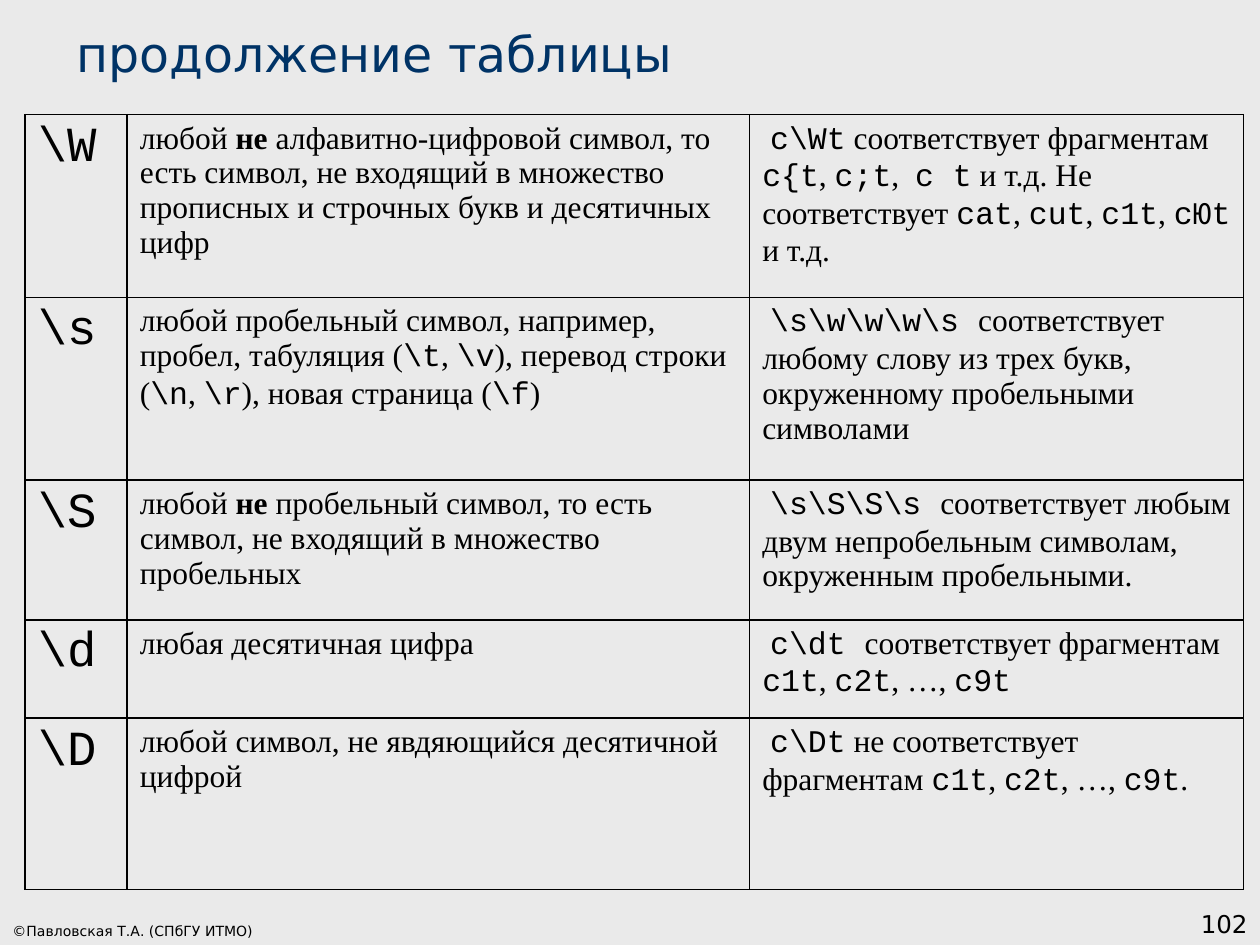
from lxml import etree
from pptx import Presentation
from pptx.dml.color import RGBColor
from pptx.enum.text import MSO_ANCHOR, PP_ALIGN
from pptx.oxml.ns import qn
from pptx.util import Inches, Pt

BOTTOM = MSO_ANCHOR.BOTTOM
LEFT, RIGHT = PP_ALIGN.LEFT, PP_ALIGN.RIGHT

BLACK = RGBColor(0x00, 0x00, 0x00)
NAVY = RGBColor(0x00, 0x33, 0x66)
PALE_GRAY = RGBColor(0xEA, 0xEA, 0xEA)

SANS = "DejaVu Sans"
SERIF = "Times New Roman"
MONO = "Courier New"

COLUMN_WIDTHS = [0.81, 4.94, 3.92]
ROW_HEIGHTS = [1.45, 1.45, 1.11, 0.78, 1.36]

# In the cells `...` marks code and *...* marks bold text.
ROWS = [
    (r"`\W`",
     "любой *не* алфавитно-цифровой символ, то есть символ, не входящий "
     "в множество прописных и строчных букв и десятичных цифр",
     r" `c\Wt` соответствует фрагментам `c{t`, `c;t`,  `c t` и т.д. "
     "Не соответствует `cat`, `cut`, `c1t`, `cЮt` и т.д."),
    (r"`\s`",
     r"любой пробельный символ, например, пробел, табуляция (`\t`, `\v`), "
     r"перевод строки (`\n`, `\r`), новая страница (`\f`)",
     r" `\s\w\w\w\s `соответствует любому слову из трех букв, "
     "окруженному пробельными символами"),
    (r"`\S`",
     "любой *не* пробельный символ, то есть символ, не входящий "
     "в множество пробельных",
     r" `\s\S\S\s `соответствует любым двум непробельным символам, "
     "окруженным пробельными."),
    (r"`\d`",
     "любая десятичная цифра",
     r" `c\dt `соответствует фрагментам `c1t`, `c2t`, …, `c9t`"),
    (r"`\D`",
     "любой символ, не явдяющийся десятичной цифрой",
     r" `c\Dt` не соответствует фрагментам `c1t`, `c2t`, …, `c9t`."),
]


def add_label(page, box, text, size, color=BLACK, align=LEFT):
    label = page.shapes.add_textbox(*[Inches(length) for length in box])
    frame = label.text_frame
    frame.word_wrap = True
    frame.vertical_anchor = BOTTOM
    frame.text = text
    para = frame.paragraphs[0]
    para.alignment = align
    para.font.name = SANS
    para.font.size = Pt(size)
    para.font.color.rgb = color


def add_span(para, text, font_name, size, bold=False):
    span = para.add_run()
    span.text = text
    span.font.name = font_name
    span.font.size = Pt(size)
    span.font.bold = bold
    span.font.color.rgb = BLACK


def write_marked(para, marked, size):
    """Turn `code` and *bold* marks into formatted runs."""
    for code_index, part in enumerate(marked.split("`")):
        if code_index % 2:
            add_span(para, part, MONO, size)
            continue
        for bold_index, piece in enumerate(part.split("*")):
            if piece:
                add_span(para, piece, SERIF, size, bold=bold_index % 2 == 1)


def add_borders(cell):
    properties = cell._tc.get_or_add_tcPr()
    for position, side in enumerate(("lnL", "lnR", "lnT", "lnB")):
        line = etree.Element(qn(f"a:{side}"), w=str(Pt(1)))
        fill = etree.SubElement(line, qn("a:solidFill"))
        etree.SubElement(fill, qn("a:srgbClr"), val=str(BLACK))
        properties.insert(position, line)


def add_symbol_table(page, left, top):
    frame = page.shapes.add_table(
        len(ROWS), len(COLUMN_WIDTHS), Inches(left), Inches(top),
        Inches(sum(COLUMN_WIDTHS)), Inches(sum(ROW_HEIGHTS)))
    table = frame.table
    table.first_row = False
    table.horz_banding = False
    for column, width in zip(table.columns, COLUMN_WIDTHS):
        column.width = Inches(width)
    for row, height, texts in zip(table.rows, ROW_HEIGHTS, ROWS):
        row.height = Inches(height)
        for index, (cell, text) in enumerate(zip(row.cells, texts)):
            cell.fill.background()
            add_borders(cell)
            write_marked(cell.text_frame.paragraphs[0], text,
                         28 if index == 0 else 18)


def main():
    deck = Presentation()
    deck.slide_width, deck.slide_height = Inches(10), Inches(7.5)
    page = deck.slides.add_slide(deck.slide_layouts[6])
    page.background.fill.solid()
    page.background.fill.fore_color.rgb = PALE_GRAY

    add_label(page, (0, 7.22, 3.11, 0.28), "©Павловская Т.А. (СПбГУ ИТМО)", 8)
    add_label(page, (7.92, 7, 2.08, 0.5), "102", 14, align=RIGHT)
    add_label(page, (0.51, 0.13, 9.37, 0.57), "продолжение таблицы", 28, NAVY)
    add_symbol_table(page, 0.2, 0.91)
    deck.save("out.pptx")


if __name__ == "__main__":
    main()
